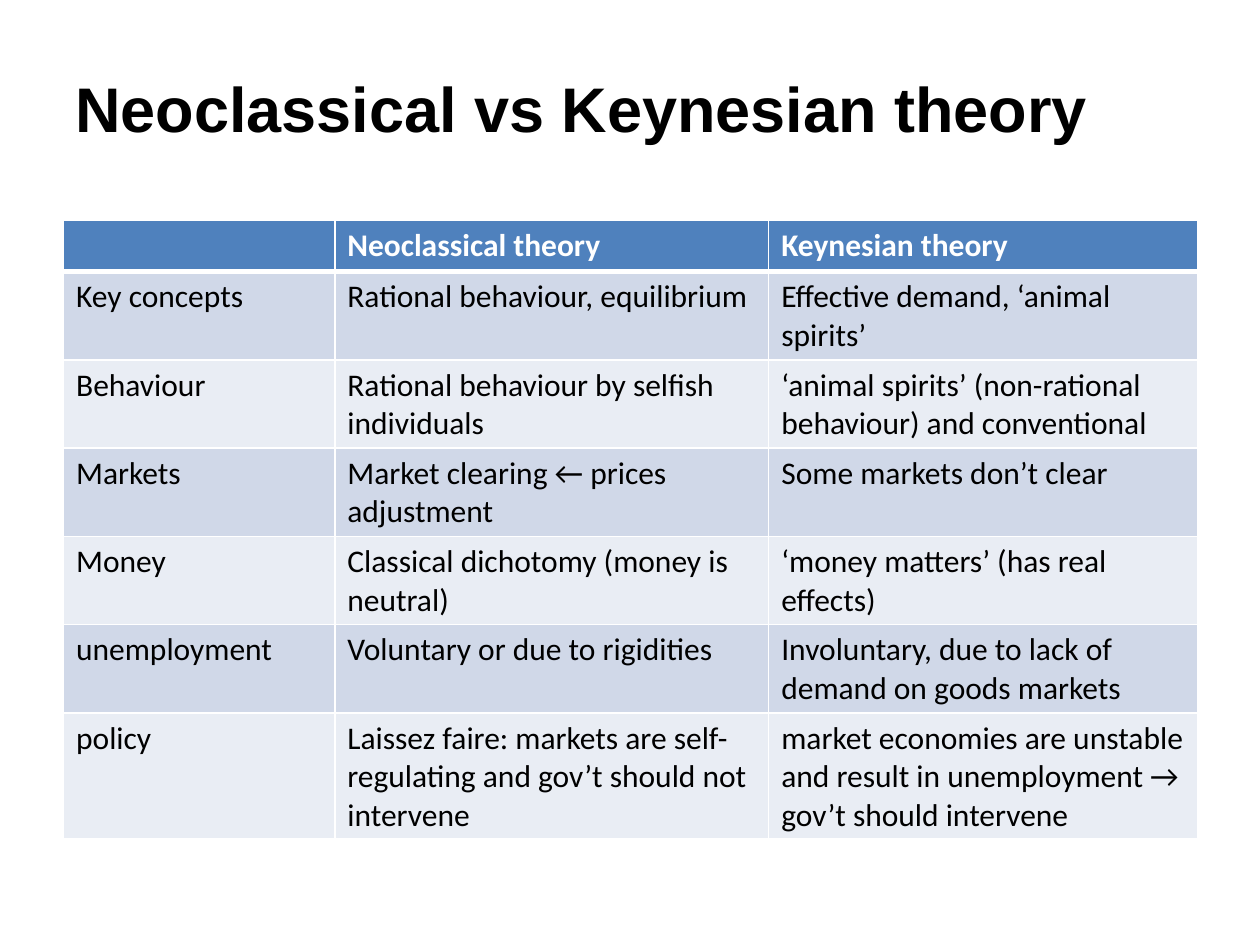
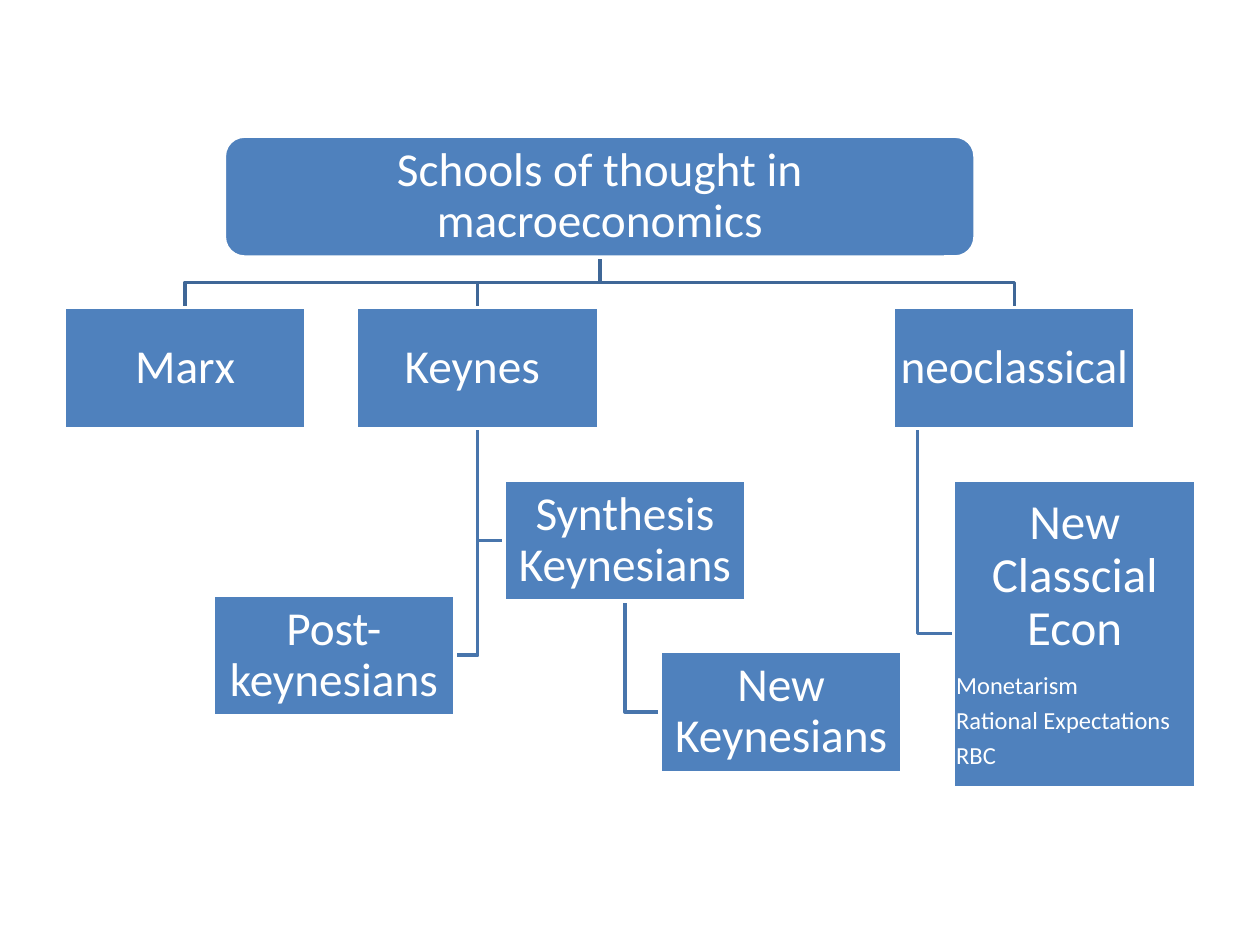
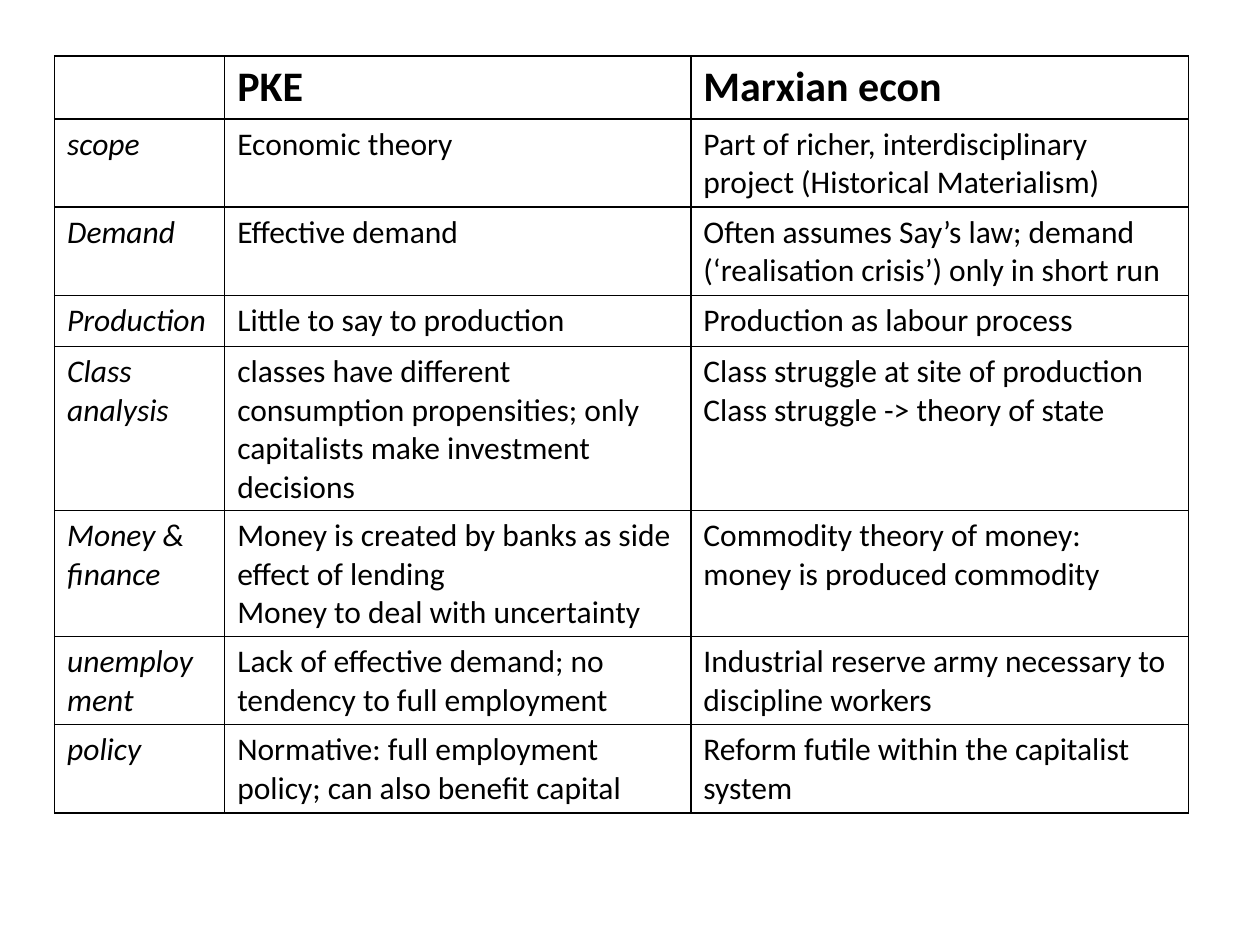
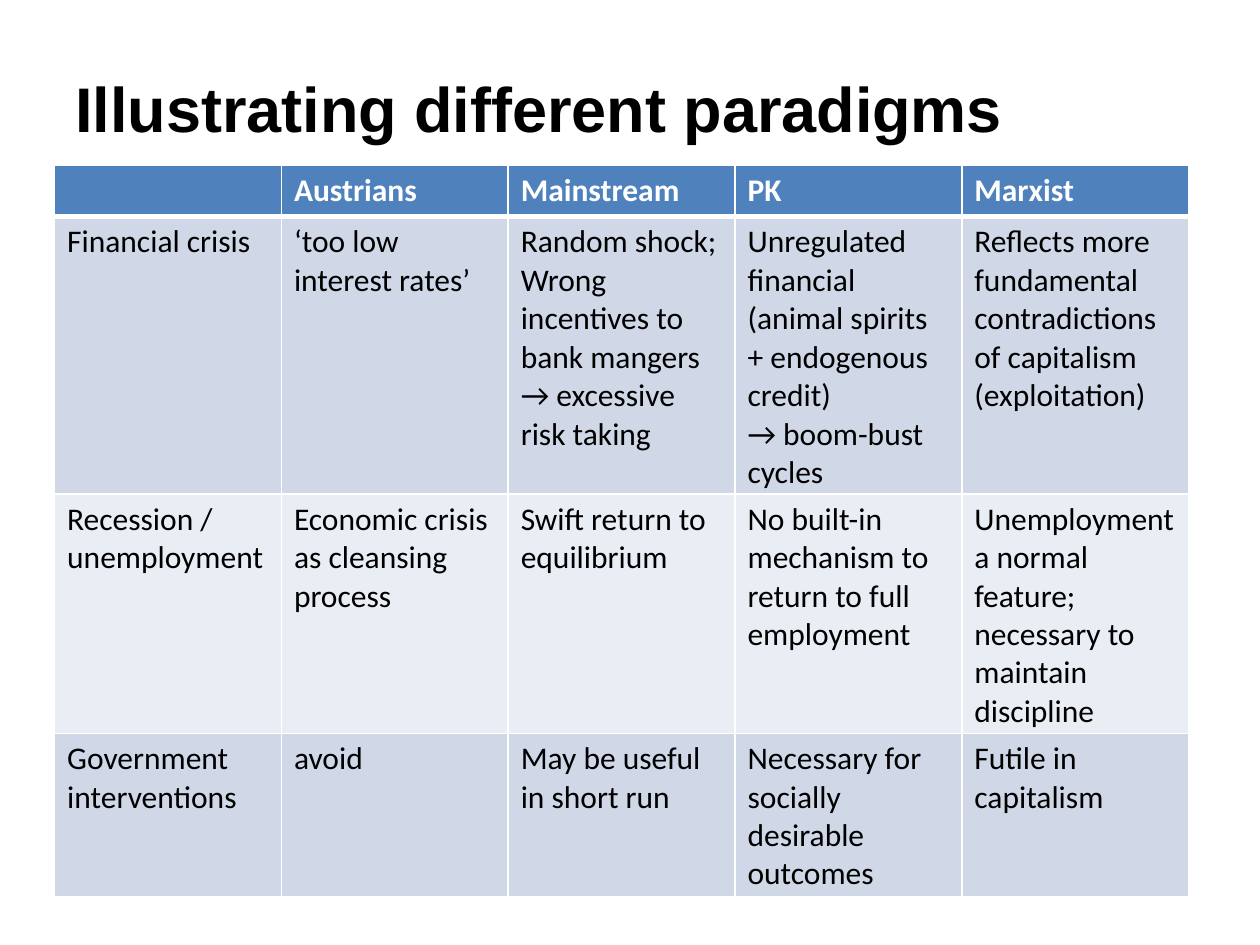
"""Build four slides comparing schools of thought in macroeconomics."""
from typing import NamedTuple

from lxml import etree
from pptx import Presentation
from pptx.dml.color import RGBColor
from pptx.enum.shapes import MSO_SHAPE
from pptx.enum.text import MSO_ANCHOR, PP_ALIGN
from pptx.oxml.ns import qn
from pptx.util import Pt

RECTANGLE = MSO_SHAPE.RECTANGLE
ROUNDED = MSO_SHAPE.FLOWCHART_ALTERNATE_PROCESS
MIDDLE = MSO_ANCHOR.MIDDLE
CENTER, LEFT = PP_ALIGN.CENTER, PP_ALIGN.LEFT

COLORS = {
    "text": "000000",
    "white": "FFFFFF",
    "accent": "4F81BD",
    "band_dark": "D0D8E8",
    "band_light": "E9EDF4",
    "root_link": "3F6797",
    "branch_link": "4875AC",
}
TITLE_FONT, BODY_FONT = "Arial", "Calibri"
ROW_HEIGHT = 29.2
BOX_WIDTH, BOX_HEIGHT = 138.2, 69.1

THEORIES = [
    ["", "Neoclassical theory", "Keynesian theory"],
    ["Key concepts", "Rational behaviour, equilibrium", "Effective demand, ‘animal spirits’"],
    ["Behaviour", "Rational behaviour by selfish individuals",
     "‘animal spirits’ (non-rational behaviour) and conventional"],
    ["Markets", "Market clearing ← prices adjustment", "Some markets don’t clear"],
    ["Money", "Classical dichotomy (money is neutral)", "‘money matters’ (has real effects)"],
    ["unemployment", "Voluntary or due to rigidities",
     "Involuntary, due to lack of demand on goods markets"],
    ["policy", "Laissez faire: markets are self-regulating and gov’t should not intervene",
     "market economies are unstable and result in unemployment → gov’t should intervene"],
]
PKE_AND_MARX = [
    ["", "PKE", "Marxian econ"],
    ["scope", "Economic theory",
     "Part of richer, interdisciplinary project (Historical Materialism)"],
    ["Demand", "Effective demand",
     "Often assumes Say’s law; demand (‘realisation crisis’) only in short run"],
    ["Production", "Little to say to production", "Production as labour process"],
    ["Class analysis",
     "classes have different consumption propensities; only capitalists make investment decisions",
     "Class struggle at site of production\nClass struggle -> theory of state"],
    ["Money & finance",
     "Money is created by banks as side effect of lending\nMoney to deal with uncertainty",
     "Commodity theory of money: money is produced commodity"],
    ["unemployment", "Lack of effective demand; no tendency to full employment",
     "Industrial reserve army necessary to discipline workers"],
    ["policy", "Normative: full employment policy; can also benefit capital",
     "Reform futile within the capitalist system"],
]
PARADIGMS = [
    ["", "Austrians", "Mainstream", "PK", "Marxist"],
    ["Financial crisis", "‘too low interest rates’",
     "Random shock;\nWrong incentives to bank mangers → excessive risk taking",
     "Unregulated financial (animal spirits + endogenous credit)\n→ boom-bust cycles",
     "Reflects more fundamental contradictions of capitalism (exploitation)"],
    ["Recession / unemployment", "Economic crisis as cleansing process",
     "Swift return to equilibrium", "No built-in mechanism to return to full employment",
     "Unemployment a normal feature; necessary to maintain discipline"],
    ["Government interventions", "avoid", "May be useful in short run",
     "Necessary for socially desirable outcomes", "Futile in capitalism"],
]


class School(NamedTuple):
    """A box of the tree, in points."""
    name: str
    left: float
    top: float
    width: float = BOX_WIDTH
    height: float = BOX_HEIGHT
    size: int = 27
    currents: tuple = ()

    @property
    def center(self):
        """Return the horizontal centre."""
        return self.left + self.width / 2

    @property
    def bottom(self):
        """Return the lower edge."""
        return self.top + self.height


def color(name):
    """Return a named colour."""
    return RGBColor.from_string(COLORS[name])


def style_font(paragraph, face, size, color_name, bold=False, italic=False):
    """Set the font of a whole paragraph."""
    font = paragraph.font
    font.name, font.size = face, Pt(size)
    font.bold, font.italic = bold, italic
    font.color.rgb = color(color_name)


def add_title(slide, title):
    """Add the slide title."""
    frame = slide.shapes.add_textbox(Pt(36), Pt(22.3), Pt(648), Pt(78.5)).text_frame
    frame.word_wrap = True
    frame.vertical_anchor = MIDDLE
    frame.text = title
    style_font(frame.paragraphs[0], TITLE_FONT, 36, "text", bold=True)


def set_borders(cell, color_name, widths):
    """Draw the left, right, top and bottom borders of a cell."""
    properties = cell._tc.get_or_add_tcPr()
    for position, (side, width) in enumerate(zip("LRTB", widths)):
        border = etree.Element(qn(f"a:ln{side}"), w=str(Pt(width)))
        fill = etree.SubElement(border, qn("a:solidFill"))
        etree.SubElement(fill, qn("a:srgbClr"), val=COLORS[color_name])
        properties.insert(position, border)


def add_grid(slide, left, top, widths, rows):
    """Add a table with its columns sized and return its numbered cells."""
    table = slide.shapes.add_table(
        len(rows), len(widths), Pt(left), Pt(top),
        Pt(sum(widths)), Pt(ROW_HEIGHT * len(rows))).table
    for column, width in zip(table.columns, widths):
        column.width = Pt(width)
    for r, row in enumerate(rows):
        for c, entry in enumerate(row):
            table.cell(r, c).text = entry
    return table


def add_banded_table(slide, left, top, widths, rows):
    """Add a table with a blue header and shaded bands."""
    table = add_grid(slide, left, top, widths, rows)
    for r, row in enumerate(table.rows):
        header = r == 0
        band = "accent" if header else ("band_light", "band_dark")[r % 2]
        for cell in row.cells:
            set_borders(cell, "white", (1, 1, 3 if r == 1 else 1, 3 if header else 1))
            cell.fill.solid()
            cell.fill.fore_color.rgb = color(band)
            for paragraph in cell.text_frame.paragraphs:
                style_font(paragraph, BODY_FONT, 18, "white" if header else "text", bold=header)


def add_ruled_table(slide, left, top, widths, rows):
    """Add an unfilled table with black rules and italic row labels."""
    table = add_grid(slide, left, top, widths, rows)
    table.first_row = table.horz_banding = False
    for r, row in enumerate(table.rows):
        header = r == 0
        for c, cell in enumerate(row.cells):
            set_borders(cell, "text", (1, 1, 1, 1))
            cell.fill.background()
            size = 24 if header and c else 18
            for paragraph in cell.text_frame.paragraphs:
                style_font(paragraph, BODY_FONT, size, "text",
                           bold=header, italic=c == 0 and not header)


def add_link(slide, points, color_name):
    """Draw an open angled line through the points."""
    start, *others = [(Pt(x), Pt(y)) for x, y in points]
    builder = slide.shapes.build_freeform(*start)
    builder.add_line_segments(others, close=False)
    link = builder.convert_to_shape()
    link.shadow.inherit = False
    link.fill.background()
    link.line.color.rgb = color(color_name)
    link.line.width = Pt(2)


def link_below(slide, parent, child):
    """Link a parent to the top of a child, turning halfway."""
    turn = (parent.bottom + child.top) / 2
    add_link(slide, [(parent.center, parent.bottom), (parent.center, turn),
                     (child.center, turn), (child.center, child.top)], "root_link")


def link_beside(slide, parent, child, share=0.5):
    """Link a parent to the near side of a child, starting at a share of its width."""
    trunk = parent.left + parent.width * share
    middle = child.top + child.height / 2
    side = child.left if child.left > trunk else child.left + child.width
    add_link(slide, [(trunk, parent.bottom), (trunk, middle), (side, middle)], "branch_link")


def add_school(slide, school, outline=RECTANGLE):
    """Draw a school with its name and the currents within it."""
    box = slide.shapes.add_shape(outline, Pt(school.left), Pt(school.top),
                                 Pt(school.width), Pt(school.height))
    box.shadow.inherit = False
    box.fill.solid()
    box.fill.fore_color.rgb = color("accent")
    box.line.color.rgb = color("white")
    box.line.width = Pt(2)
    frame = box.text_frame
    frame.word_wrap = True
    frame.vertical_anchor = MIDDLE
    frame.margin_left = frame.margin_right = frame.margin_top = frame.margin_bottom = Pt(1.4)
    frame.text = "\n".join((school.name, *school.currents))
    for order, paragraph in enumerate(frame.paragraphs):
        size = 14 if order else school.size
        paragraph.alignment = LEFT if order else CENTER
        paragraph.line_spacing = 0.9
        paragraph.space_after = Pt(0.35 * size)
        style_font(paragraph, BODY_FONT, size, "white")


def add_school_tree(slide):
    """Draw the tree of schools of thought."""
    root = School("Schools of thought in macroeconomics", 128.2, 77.8, width=429)
    marx = School("Marx", 36.7, 175.8)
    keynes = School("Keynes ", 203.8, 175.8)
    neoclassical = School("neoclassical", 510.5, 175.8)
    post_keynesians = School("Post-keynesians", 121.7, 339.9)
    synthesis = School("Synthesis Keynesians", 288, 274.3)
    new_keynesians = School("New Keynesians", 377.3, 372.3)
    new_classical = School("New Classcial Econ", 545, 274.3, height=175.6, size=28,
                           currents=("Monetarism", "Rational Expectations", "RBC"))

    link_beside(slide, neoclassical, new_classical, share=0.1)
    link_below(slide, root, neoclassical)
    link_beside(slide, synthesis, new_keynesians)
    link_beside(slide, keynes, synthesis)
    link_beside(slide, keynes, post_keynesians)
    link_below(slide, root, keynes)
    link_below(slide, root, marx)
    add_school(slide, root, ROUNDED)
    for school in (marx, keynes, post_keynesians, synthesis,
                   new_keynesians, neoclassical, new_classical):
        add_school(slide, school)


def main():
    """Build and save the presentation."""
    deck = Presentation()
    deck.slide_width, deck.slide_height = Pt(720), Pt(540)
    blank = deck.slide_layouts[6]
    theories, schools, pke_and_marx, paradigms = [deck.slides.add_slide(blank) for _ in range(4)]

    add_title(theories, "Neoclassical vs Keynesian theory")
    add_banded_table(theories, 36.3, 126, (155, 248, 245), THEORIES)

    add_school_tree(schools)

    add_ruled_table(pke_and_marx, 31.2, 31.9, (97.2, 266.4, 284.4), PKE_AND_MARX)

    add_title(paradigms, "Illustrating different paradigms")
    add_banded_table(paradigms, 31.2, 94.6, [129.6] * 5, PARADIGMS)

    deck.save("out.pptx")


if __name__ == "__main__":
    main()
